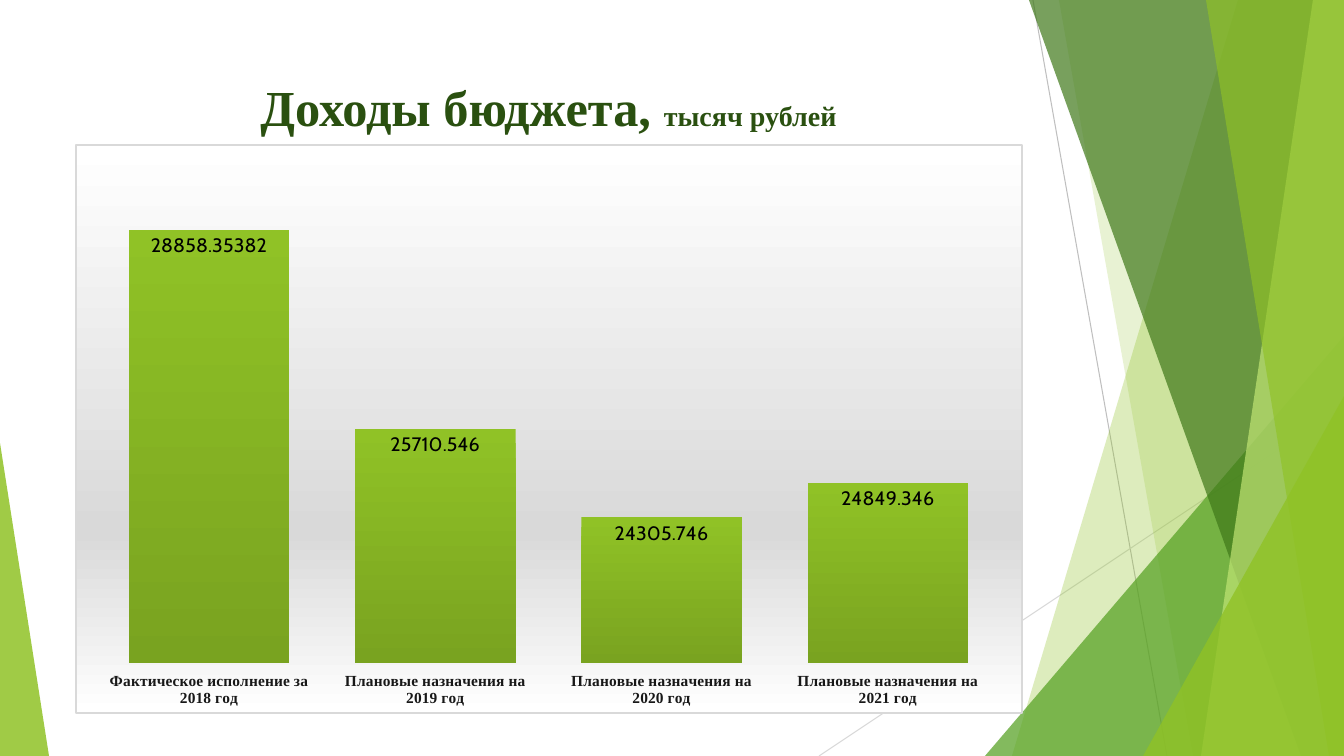
from lxml.etree import SubElement
from pptx import Presentation
from pptx.chart.data import CategoryChartData
from pptx.dml.color import RGBColor
from pptx.enum.chart import XL_CHART_TYPE, XL_LABEL_POSITION, XL_TICK_LABEL_POSITION, XL_TICK_MARK
from pptx.enum.shapes import MSO_CONNECTOR, MSO_SHAPE
from pptx.enum.text import MSO_ANCHOR, PP_ALIGN
from pptx.oxml import parse_xml
from pptx.oxml.ns import nsdecls, qn
from pptx.util import Pt

WIDTH, HEIGHT = 1344, 756
PX = 12192000 / WIDTH

COLORS = {
    "title": "2A5010", "category": "181818", "value": "000000",
    "lime": "90C226", "lime_dark": "79A320", "green": "54A021",
    "forest": "3F7819", "pale": "C0E474",
    "white": "FFFFFF", "silver": "D9D9D9", "gray": "BFBFBF",
}

INCOME = {
    "Фактическое исполнение за 2018 год": 28858.35382,
    "Плановые назначения на 2019 год": 25710.546,
    "Плановые назначения на 2020 год": 24305.746,
    "Плановые назначения на 2021 год": 24849.346,
}


def emu(*lengths):
    return [round(length * PX) for length in lengths]


def rgb(name):
    return RGBColor.from_string(COLORS[name])


def set_font(font, color, **values):
    for key, value in values.items():
        setattr(font, key, value)
    font.color.rgb = rgb(color)


def paint(facet, color, opacity):
    """Fill a facet with a translucent colour, without outline or shadow."""
    facet.shadow.inherit = False
    facet.fill.solid()
    facet.fill.fore_color.rgb = rgb(color)
    facet.line.fill.background()
    tint = facet.fill._xPr.find(f".//{qn('a:srgbClr')}")
    SubElement(tint, qn("a:alpha"), val=str(opacity * 1000))


def add_ray(slide, start, end, color):
    ray = slide.shapes.add_connector(MSO_CONNECTOR.STRAIGHT, *emu(*start, *end))
    ray.line.color.rgb = rgb(color)
    ray.line.width = Pt(0.75)
    SubElement(ray._element.spPr, qn("a:effectLst"))


def add_blade(slide, box, top_left, bottom_left, color, opacity):
    """Add a facet that reaches the right side of the box."""
    left, top, width, height = box
    right, bottom = left + width, top + height
    builder = slide.shapes.build_freeform(left + top_left, top, scale=PX)
    builder.add_line_segments(
        [(right, top), (right, bottom), (left + bottom_left, bottom)], close=True)
    paint(builder.convert_to_shape(), color, opacity)


def add_corner(slide, box, width, height, apex, color, opacity):
    """Add a triangle in a bottom corner of the box: apex 0 is left, 1 is right."""
    left, top, box_width, box_height = box
    corner = slide.shapes.add_shape(
        MSO_SHAPE.ISOSCELES_TRIANGLE,
        *emu(left + apex * (box_width - width), top + box_height - height, width, height))
    corner.adjustments[0] = apex
    paint(corner, color, opacity)


def add_facets(slide, box):
    left, top, width, height = box
    bottom = top + height
    add_ray(slide, (left + 1033, top), (left + 1167, bottom), "gray")
    add_ray(slide, (left + width, top + 406), (left + 819, bottom), "silver")
    add_blade(slide, box, 1238, 1012, "lime", 30)
    add_blade(slide, box, 1059, 1193, "lime", 20)
    add_corner(slide, box, 359, 420, 1, "green", 72)
    add_blade(slide, box, 1029, 1301, "forest", 70)
    add_blade(slide, box, 1313, 1201, "pale", 70)
    add_blade(slide, box, 1206, 1329, "lime", 65)
    add_corner(slide, box, 201, 360, 1, "lime", 80)
    add_corner(slide, box, 49, 313, 0, "lime", 85)


def add_title(slide, box):
    frame = slide.shapes.add_textbox(*emu(*box)).text_frame
    frame.word_wrap = True
    frame.vertical_anchor = MSO_ANCHOR.MIDDLE
    heading = frame.paragraphs[0]
    heading.alignment = PP_ALIGN.CENTER
    for text, size in (("Доходы бюджета, ", 36), ("тысяч рублей", 20)):
        run = heading.add_run()
        run.text = text
        set_font(run.font, "title", name="Times New Roman", size=Pt(size), bold=True)


def gradient(*stops):
    """Make a fill that runs from top to bottom through (percent, colour) stops."""
    marks = "".join(
        f'<a:gs pos="{percent * 1000}"><a:srgbClr val="{COLORS[color]}"/></a:gs>'
        for percent, color in stops)
    return parse_xml(f'<a:gradFill {nsdecls("a")} rotWithShape="1"><a:gsLst>{marks}</a:gsLst>'
                     '<a:lin ang="5400000" scaled="0"/></a:gradFill>')


def style_panel(chart):
    panel = parse_xml(
        f'<c:spPr {nsdecls("c", "a")}><a:ln w="{Pt(1.5)}"><a:solidFill>'
        f'<a:srgbClr val="{COLORS["silver"]}"/></a:solidFill></a:ln></c:spPr>')
    panel.insert(0, gradient((0, "white"), (68, "silver"), (100, "white")))
    chart._chartSpace.find(qn("c:chart")).addnext(panel)


def place_plot(chart, box, margins):
    """Fix the inner plot area by its left, top, right and bottom margins."""
    _, _, width, height = box
    left, top, right, bottom = margins
    parts = {"x": left / width, "y": top / height,
             "w": (width - left - right) / width, "h": (height - top - bottom) / height}
    plot_area = chart._chartSpace.find(f".//{qn('c:plotArea')}")
    for layout in plot_area.findall(qn("c:layout")):
        plot_area.remove(layout)
    modes = '<c:xMode val="edge"/><c:yMode val="edge"/>'
    sizes = "".join(f'<c:{key} val="{share:.4f}"/>' for key, share in parts.items())
    plot_area.insert(0, parse_xml(
        f'<c:layout {nsdecls("c")}><c:manualLayout><c:layoutTarget val="inner"/>'
        f'{modes}{sizes}</c:manualLayout></c:layout>'))


def add_income_chart(slide, box):
    income = CategoryChartData()
    income.categories = list(INCOME)
    income.add_series("Доходы бюджета", list(INCOME.values()))
    chart = slide.shapes.add_chart(
        XL_CHART_TYPE.COLUMN_CLUSTERED, *emu(*box), income).chart
    chart.has_legend = chart.has_title = False
    set_font(chart.font, "value", name="Cabin", size=Pt(10))
    style_panel(chart)
    place_plot(chart, box, (20, 13, 21, 50))

    years, amounts = chart.category_axis, chart.value_axis
    years.major_tick_mark = XL_TICK_MARK.NONE
    years.tick_label_position = XL_TICK_LABEL_POSITION.LOW
    years.format.line.fill.background()
    set_font(years.tick_labels.font, "category",
             name="Times New Roman", size=Pt(11), bold=True)
    for key, value in {"minimum_scale": 22000, "maximum_scale": 30000,
                       "has_major_gridlines": False, "visible": False}.items():
        setattr(amounts, key, value)

    plot = chart.plots[0]
    plot.gap_width = 41
    plot.vary_by_categories = False
    columns = plot.series[0]
    columns.invert_if_negative = False
    columns._element.get_or_add_spPr().append(gradient((0, "lime"), (100, "lime_dark")))
    labels = columns.data_labels
    labels.show_value = True
    labels.position = XL_LABEL_POSITION.INSIDE_END
    set_font(labels.font, "value", name="Cabin", size=Pt(14))


def main():
    deck = Presentation()
    deck.slide_width, deck.slide_height = emu(WIDTH, HEIGHT)
    slide = deck.slides.add_slide(deck.slide_layouts[6])
    add_facets(slide, (0, 0, WIDTH, HEIGHT))
    add_title(slide, (75, 67, 947, 78))
    add_income_chart(slide, (75, 144, 948, 570))
    deck.save("out.pptx")


if __name__ == "__main__":
    main()
